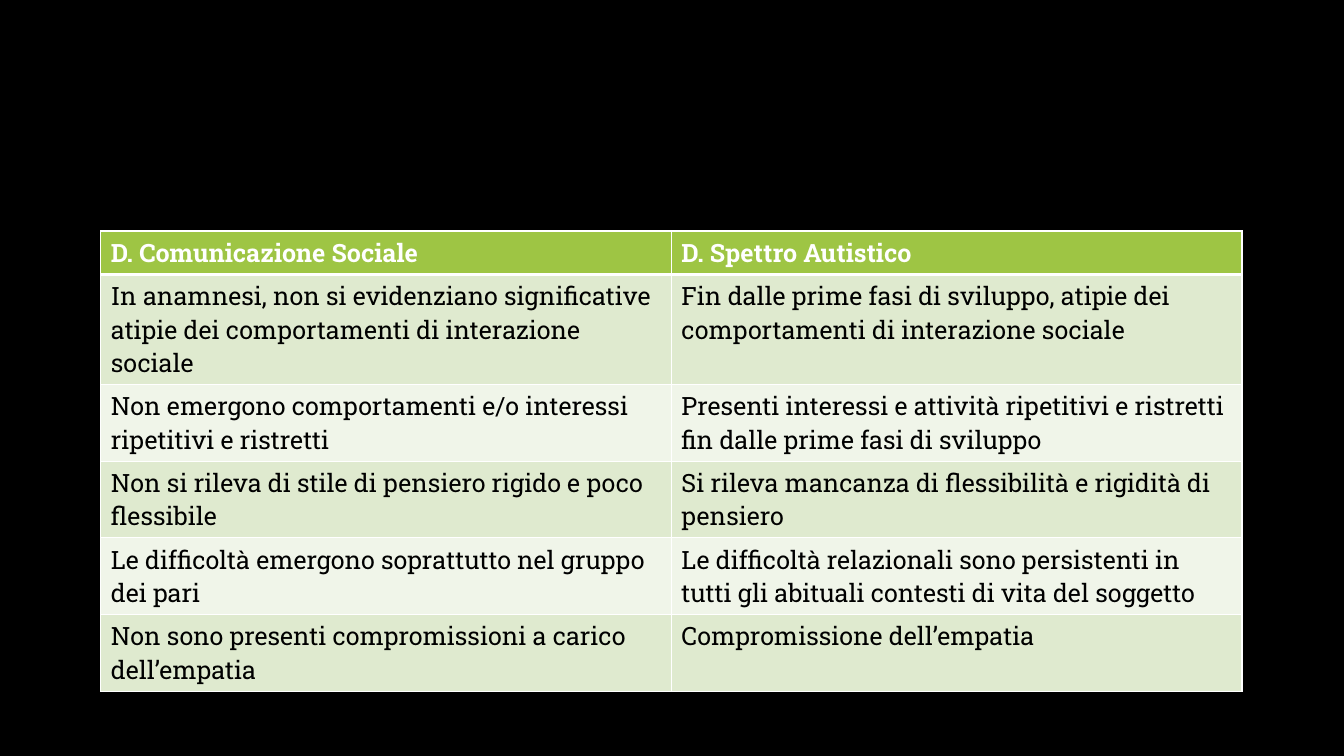
from lxml import etree
from pptx import Presentation
from pptx import util as u
from pptx.dml.color import RGBColor
from pptx.oxml import ns


def paint(fill, color):
    fill.solid()
    fill.fore_color.rgb = RGBColor.from_string(color)


def add_borders(cell, widths, color):
    properties = cell._tc.get_or_add_tcPr()
    for position, (side, width) in enumerate(widths.items()):
        line = etree.Element(ns.qn(f"a:ln{side}"), w=str(u.Pt(width)))
        solid = etree.SubElement(line, ns.qn("a:solidFill"))
        etree.SubElement(solid, ns.qn("a:srgbClr"), val=color)
        properties.insert(position, line)


rows = [
    ("D. Comunicazione Sociale", "D. Spettro Autistico"),
    (
        "In anamnesi, non si evidenziano significative atipie dei comportamenti di interazione sociale",
        "Fin dalle prime fasi di sviluppo, atipie dei comportamenti di interazione sociale",
    ),
    (
        "Non emergono comportamenti e/o interessi ripetitivi e ristretti",
        "Presenti interessi e attività ripetitivi e ristretti fin dalle prime fasi di sviluppo",
    ),
    (
        "Non si rileva di stile di pensiero rigido e poco flessibile",
        "Si rileva mancanza di flessibilità e rigidità di pensiero",
    ),
    (
        "Le difficoltà emergono soprattutto nel gruppo dei pari",
        "Le difficoltà relazionali sono persistenti in tutti gli abituali contesti di vita del soggetto",
    ),
    (
        "Non sono presenti compromissioni a carico dell’empatia",
        "Compromissione dell’empatia",
    ),
]
header_fill = "9EC544"
band_fills = ["F0F5E9", "DFEACF"]
row_height = u.Cm(1.03)

presentation = Presentation()
presentation.slide_width = u.Cm(33.87)
presentation.slide_height = u.Cm(19.05)
slide = presentation.slides.add_slide(presentation.slide_layouts[6])
paint(slide.background.fill, "000000")

table = slide.shapes.add_table(
    len(rows), 2, u.Cm(2.54), u.Cm(5.82), u.Cm(28.76), row_height * len(rows)
).table

for row_index, row_texts in enumerate(rows):
    table.rows[row_index].height = row_height
    is_header = row_index == 0
    fill_color = header_fill if is_header else band_fills[row_index % 2]
    text_color = "FFFFFF" if is_header else "000000"
    font_format = {"name": "Roboto Slab", "size": u.Pt(18), "bold": is_header}
    border_widths = {
        "L": 1,
        "R": 1,
        "T": 3 if row_index == 1 else 1,
        "B": 3 if is_header else 1,
    }
    for column_index, cell_text in enumerate(row_texts):
        cell = table.cell(row_index, column_index)
        paint(cell.fill, fill_color)
        add_borders(cell, border_widths, "FFFFFF")
        run = cell.text_frame.paragraphs[0].add_run()
        run.text = cell_text
        for attribute, value in font_format.items():
            setattr(run.font, attribute, value)
        paint(run.font.fill, text_color)

presentation.save("out.pptx")
